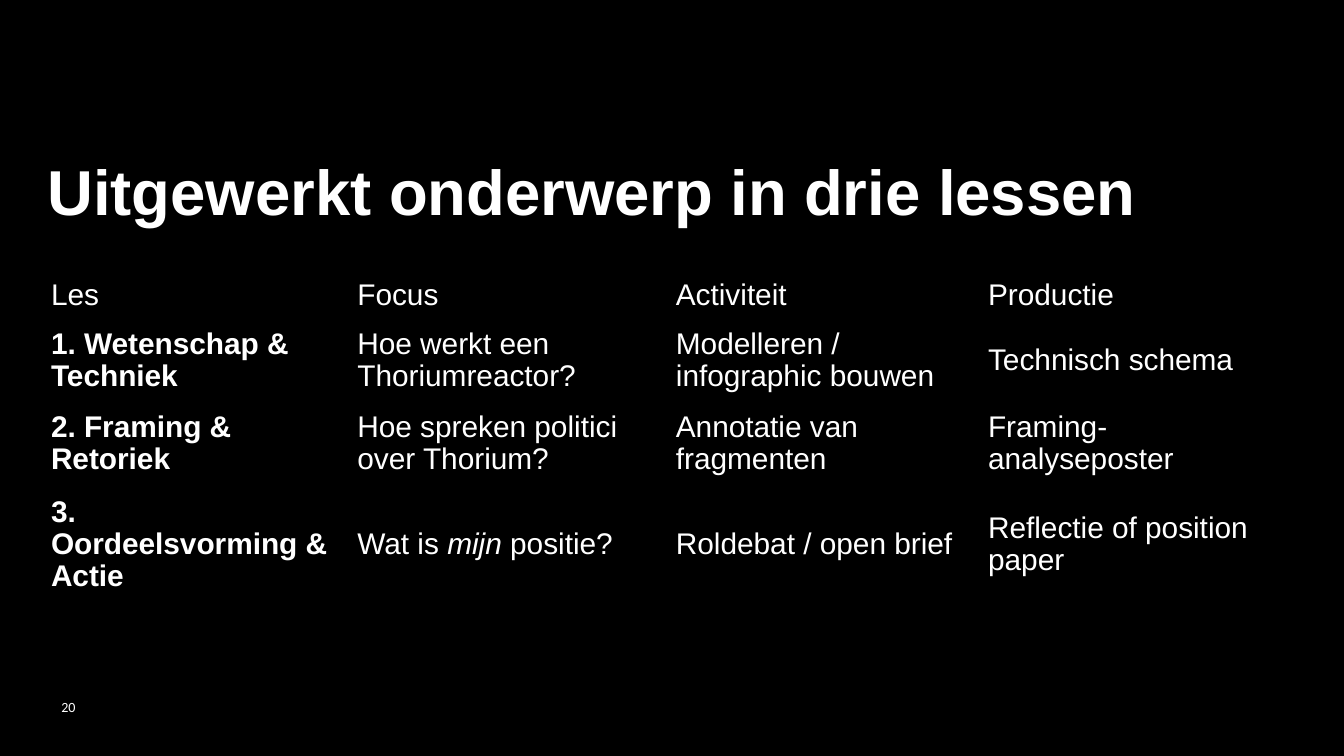
from pptx import Presentation
from pptx.dml.color import RGBColor
from pptx.enum.text import MSO_ANCHOR
from pptx.util import Cm, Pt

WHITE = "FFFFFF"
BLACK = "000000"
WIDTHS = [5.79, 6.02, 5.9, 5.9]
HEIGHTS = [0.88, 1.51, 1.51, 2.14]
ROWS = [
    ["Les", "Focus", "Activiteit", "Productie"],
    ["1. Wetenschap & Techniek", "Hoe werkt een Thoriumreactor?",
     "Modelleren / infographic bouwen", "Technisch schema"],
    ["2. Framing & Retoriek", "Hoe spreken politici over Thorium?",
     "Annotatie van fragmenten", "Framing-analyseposter"],
    ["3. Oordeelsvorming & Actie", ("Wat is ", "mijn", " positie?"),
     "Roldebat / open brief", "Reflectie of position paper"],
]


def color(code):
    return RGBColor.from_string(code)


def style(font, size, name="Arial", bold=False, slant=False):
    font.size = Pt(size)
    font.name = name
    font.bold = bold
    font.italic = slant
    font.color.rgb = color(WHITE)


def add_text(slide, box, text):
    frame = slide.shapes.add_textbox(*map(Cm, box)).text_frame
    frame.word_wrap = True
    frame.text = text
    return frame


def add_title(slide, box):
    frame = add_text(slide, box, "Uitgewerkt onderwerp in drie lessen")
    frame.margin_left = frame.margin_right = frame.margin_bottom = 0
    frame.margin_top = Cm(0.1)
    style(frame.paragraphs[0].runs[0].font, 34, bold=True)


def add_number(slide, box):
    frame = add_text(slide, box, "20")
    frame.vertical_anchor = MSO_ANCHOR.MIDDLE
    style(frame.paragraphs[0].runs[0].font, 7.5, "Calibri")


def fill_cell(cell, text, bold):
    cell.fill.background()
    cell.vertical_anchor = MSO_ANCHOR.MIDDLE
    para = cell.text_frame.paragraphs[0]
    para.line_spacing = 0.97
    parts = (text,) if isinstance(text, str) else text
    for place, part in enumerate(parts):
        run = para.add_run()
        run.text = part
        style(run.font, 16, bold=bold, slant=place == 1)


def add_plan(slide, left, top):
    size = (sum(WIDTHS), sum(HEIGHTS))
    table = slide.shapes.add_table(
        len(ROWS), len(WIDTHS), *map(Cm, (left, top, *size))).table
    table.first_row = table.horz_banding = False
    for column, width in zip(table.columns, WIDTHS):
        column.width = Cm(width)
    for row, height in zip(table.rows, HEIGHTS):
        row.height = Cm(height)
    for r, line in enumerate(ROWS):
        for c, text in enumerate(line):
            fill_cell(table.cell(r, c), text, r > 0 and c == 0)
    style_id = table._tbl.tblPr.find("{*}tableStyleId")
    style_id.text = "{2D5ABB26-0587-4C30-8999-92F81FD0307C}"


def main():
    deck = Presentation()
    deck.slide_width, deck.slide_height = Cm(25.4), Cm(14.29)
    slide = deck.slides.add_slide(deck.slide_layouts[6])
    back = slide.background.fill
    back.solid()
    back.fore_color.rgb = color(BLACK)
    add_title(slide, (0.9, 2.77, 22.17, 3.07))
    add_number(slide, (0.91, 12.98, 1, 0.76))
    add_plan(slide, 0.71, 5.13)
    deck.save("out.pptx")


if __name__ == "__main__":
    main()
